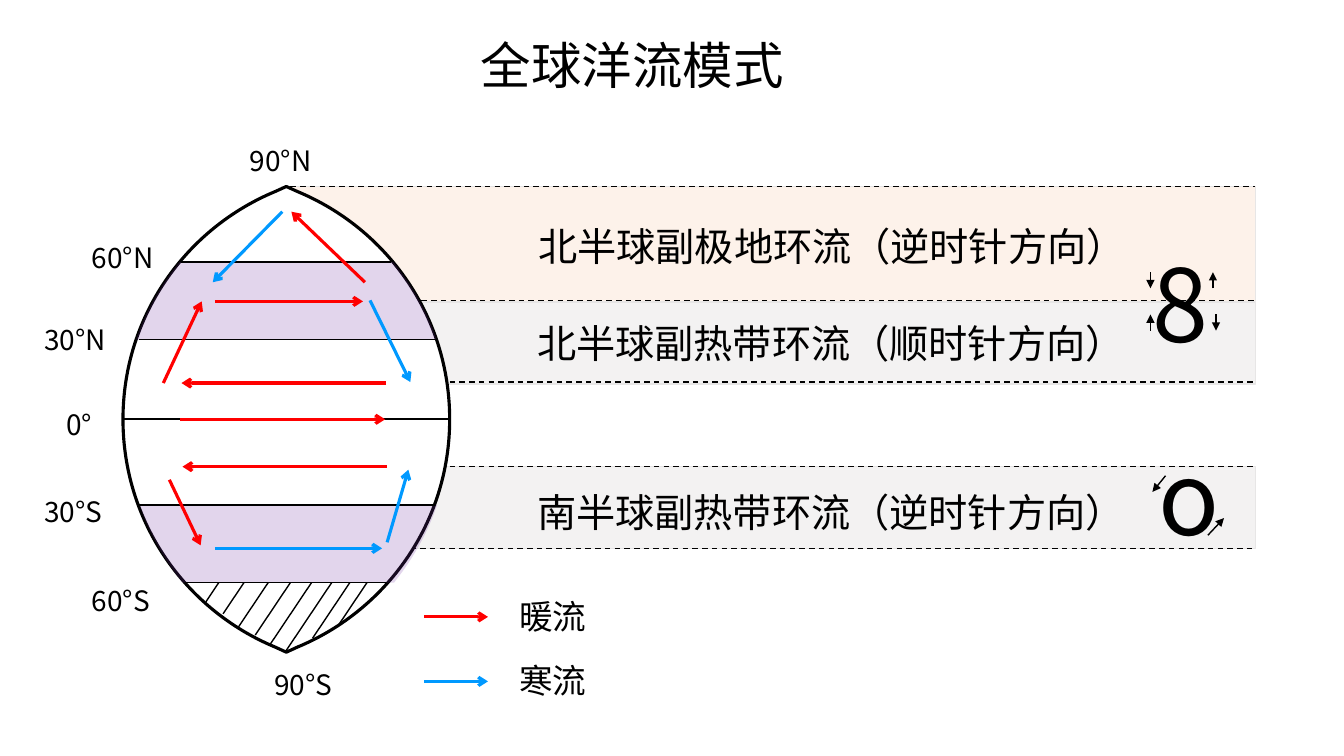
from pptx import Presentation
from pptx.dml.color import RGBColor
from pptx.enum.dml import MSO_LINE
from pptx.enum.shapes import MSO_CONNECTOR, MSO_SHAPE
from pptx.enum.text import MSO_ANCHOR, MSO_AUTO_SIZE, PP_ALIGN
from pptx.oxml.ns import qn
from pptx.util import Inches, Pt
from lxml.etree import SubElement

FONT = "Noto Sans CJK SC"
BLACK = RGBColor(0x00, 0x00, 0x00)
WHITE = RGBColor(0xFF, 0xFF, 0xFF)
PEACH = RGBColor(0xFC, 0xE6, 0xD5)
GREY = RGBColor(0xE7, 0xE6, 0xE6)
PURPLE = RGBColor(0x70, 0x30, 0xA0)
WARM = RGBColor(0xFF, 0x00, 0x00)
COLD = RGBColor(0x00, 0x99, 0xFF)

TITLE = ("全球洋流模式", 4.67, 0.29, 3.42, 0.71, 36)
# gyre name, text left and top, band left, top, height, fill, dashed edges (left, y)
GYRES = [
    ("北半球副极地环流（逆时针方向）", 5.24, 2.16, 2.79, 1.85, 1.14, PEACH,
     [(4.18, 2.98), (2.88, 1.85)]),
    ("南半球副热带环流（逆时针方向）", 5.23, 4.8, 1.99, 4.63, 0.81, GREY,
     [(4.07, 5.44), (4.46, 4.63)]),
    ("北半球副热带环流（顺时针方向）", 5.23, 3.12, 1.99, 3, 0.81, GREY,
     [(4.46, 3.79)]),
]
BAND_RIGHT = 12.45

AXIS, EQUATOR = 2.84, 4.16
LATITUDE_LABELS = [
    ("90°N", 2.38, 1.37), ("60°N", 0.81, 2.34), ("30°N", 0.34, 3.15),
    ("0°", 0.56, 3.99), ("30°S", 0.34, 4.86), ("60°S", 0.81, 5.74),
    ("90°S", 2.62, 6.57),
]
# left, right, y, line width
PARALLELS = [(1.8, 3.88, 2.6, 1), (1.38, 4.33, 3.37, 1),
             (1.22, 4.46, EQUATOR, 1.5), (1.36, 4.31, 5.01, 1),
             (1.84, 3.84, 5.78, 1)]
# Outlines are offsets from the axis, upwards; a segment of one point is
# straight, a segment of three points is a cubic curve.
POLE = (0, 2.31)
GLOBE_EAST = [
    [(0.11, 2.26)],
    [(1, 1.89), (1.62, 1.02), (1.62, 0)],
    [(1.62, -1.02), (1, -1.89), (0.11, -2.26)],
    [(0, -2.31)],
]
ZONE_START = (-1.06, 0.77)
ZONE = [
    [(1.06, 0.77)],
    [(1.09, 0.73)],
    [(1.24, 0.54), (1.36, 0.33), (1.45, 0.11)],
    [(1.49, 0)],
    [(-1.49, 0)],
    [(-1.45, 0.11)],
    [(-1.36, 0.33), (-1.24, 0.54), (-1.09, 0.73)],
]
# axis, y of the 30° edge, share of the width, direction towards the pole
ZONES = [(AXIS + 0.02, 5.01, 0.99, 1), (AXIS, 3.37, 1, -1)]
# top x, drop
ICE_HATCHES = [(2.17, 0.19), (2.42, 0.31), (2.66, 0.45), (2.88, 0.52),
               (3.09, 0.62), (3.29, 0.68), (3.47, 0.55), (3.64, 0.43)]
HATCH_TOP, HATCH_LEAN = 5.78, 0.67

CURRENTS = {
    WARM: [
        (3.62, 2.8, 2.89, 2.1), (2.13, 2.99, 3.6, 2.99), (1.62, 3.8, 2, 2.99),
        (3.83, 3.8, 1.8, 3.8), (1.79, 4.16, 3.82, 4.16),
        (3.84, 4.63, 1.81, 4.63), (1.68, 4.76, 1.99, 5.41),
    ],
    COLD: [
        (2.8, 2.1, 2.11, 2.8), (3.67, 2.98, 4.07, 3.79),
        (3.84, 5.38, 4.05, 4.66), (2.13, 5.44, 3.79, 5.44),
    ],
}
LEGEND = [("暖流", WARM), ("寒流", COLD)]
LEGEND_LEFT, LEGEND_TOP, LEGEND_STEP = 4.21, 6.12, 0.64

GYRE_SIGNS = [("8", 11.33, 2.35, 0.67), ("o", 11.39, 4.26, 0.78)]
SIGN_ARROWS = [
    (11.41, 2.7, 11.41, 2.86), (12.03, 2.86, 12.03, 2.7),
    (11.41, 3.28, 11.41, 3.12), (12.06, 3.12, 12.06, 3.28),
    (11.56, 4.72, 11.43, 4.88), (11.98, 5.31, 12.14, 5.14),
]


def write(box, words, size):
    frame = box.text_frame
    settings = {"word_wrap": True, "auto_size": MSO_AUTO_SIZE.SHAPE_TO_FIT_TEXT,
                "vertical_anchor": MSO_ANCHOR.TOP}
    for name, value in settings.items():
        setattr(frame, name, value)
    paragraph = frame.paragraphs[0]
    paragraph.alignment = PP_ALIGN.LEFT
    paragraph.line_spacing = 1
    run = paragraph.add_run()
    run.text = words
    for name, value in {"size": Pt(size), "name": FONT}.items():
        setattr(run.font, name, value)
    run.font.color.rgb = BLACK
    SubElement(run.font._element, qn("a:ea"), typeface=FONT)


def add_label(shapes, words, left, top, width, height, size):
    write(shapes.add_textbox(*map(Inches, (left, top, width, height))), words, size)


def add_line(shapes, ends, color=BLACK, width=1, head=None, dash=None):
    connector = shapes.add_connector(MSO_CONNECTOR.STRAIGHT, *map(Inches, ends))
    connector.line.color.rgb = color
    connector.line.width = Pt(width)
    if dash:
        connector.line.dash_style = dash
    if head:
        SubElement(connector.line._get_or_add_ln(), qn("a:tailEnd"), type=head)
    SubElement(connector._element.spPr, qn("a:effectLst"))


def paint(shape, fill, opacity=100, line=None, width=1):
    shape.shadow.inherit = False
    shape.fill.solid()
    shape.fill.fore_color.rgb = fill
    if opacity < 100:
        color = shape._element.spPr.find(qn("a:solidFill"))[0]
        SubElement(color, qn("a:alpha"), val=str(opacity * 1000))
    if line is None:
        shape.line.fill.background()
    else:
        shape.line.color.rgb = line
        shape.line.width = Pt(width)


def add_outline(shapes, start, segments, place):
    """Closed freeform; each segment of three points becomes a cubic curve."""
    vertices = [tuple(map(Inches, place(*point)))
                for segment in [[start], *segments] for point in segment]
    builder = shapes.build_freeform(*vertices[0], scale=1.0)
    builder.add_line_segments(vertices[1:], close=True)
    outline = builder.convert_to_shape()
    steps = iter(list(outline._element.iter(qn("a:lnTo"))))
    for segment in segments:
        first, *others = [next(steps) for _ in segment]
        if others:
            first.tag = qn("a:cubicBezTo")
        for other in others:
            first.append(other[0])
            other.getparent().remove(other)
    return outline


def draw_gyre_bands(slide_shapes):
    for words, text_left, text_top, left, top, height, fill, edges in GYRES:
        shapes = slide_shapes.add_group_shape().shapes
        band = shapes.add_shape(MSO_SHAPE.RECTANGLE, *map(
            Inches, (left, top, BAND_RIGHT - left, height)))
        paint(band, fill, 49, GREY)
        for edge_left, y in edges:
            add_line(shapes, (edge_left, y, BAND_RIGHT, y), dash=MSO_LINE.DASH)
        add_label(shapes, words, text_left, text_top, 6.55, 0.57, 28)


def draw_globe(shapes):
    west = [[(-x, -y) for x, y in segment] for segment in GLOBE_EAST[:-1]]
    globe = add_outline(shapes, POLE, GLOBE_EAST + west,
                        lambda x, y: (AXIS + x, EQUATOR - y))
    paint(globe, WHITE, line=BLACK, width=2.25)
    for axis, foot, share, poleward in ZONES:
        zone = add_outline(shapes, ZONE_START, ZONE,
                           lambda x, y: (axis + share * x, foot + poleward * y))
        paint(zone, PURPLE, 20)

    for left, right, y, width in PARALLELS:
        add_line(shapes, (left, y, right, y), width=width)
    for words, x, y in LATITUDE_LABELS:
        add_label(shapes, words, x, y, 0.92, 0.44, 20)
    ice = shapes.add_group_shape().shapes
    for x, drop in ICE_HATCHES:
        add_line(ice, (x, HATCH_TOP, x - HATCH_LEAN * drop, HATCH_TOP + drop))


def draw_currents(shapes):
    for color, arrows in CURRENTS.items():
        for ends in arrows:
            add_line(shapes, ends, color, 2.25, "arrow")
    for row, (words, color) in enumerate(LEGEND):
        y = LEGEND_TOP + row * LEGEND_STEP
        add_line(shapes, (LEGEND_LEFT, y, LEGEND_LEFT + 0.63, y), color, 2.25, "arrow")
        add_label(shapes, words, LEGEND_LEFT + 0.84, y - 0.26, 0.91, 0.5, 24)


def draw_gyre_signs(shapes):
    for words, left, top, width in GYRE_SIGNS:
        add_label(shapes, words, left, top, width, 1.31, 72)
    for ends in SIGN_ARROWS:
        add_line(shapes, ends, head="triangle")


def main():
    deck = Presentation()
    deck.slide_width, deck.slide_height = Inches(13.33), Inches(7.5)
    shapes = deck.slides.add_slide(deck.slide_layouts[5]).shapes
    words, *place, size = TITLE
    for name, value in zip(("left", "top", "width", "height"), place):
        setattr(shapes.title, name, Inches(value))
    write(shapes.title, words, size)
    for draw in (draw_gyre_bands, draw_globe, draw_currents, draw_gyre_signs):
        draw(shapes)
    deck.save("out.pptx")


if __name__ == "__main__":
    main()
